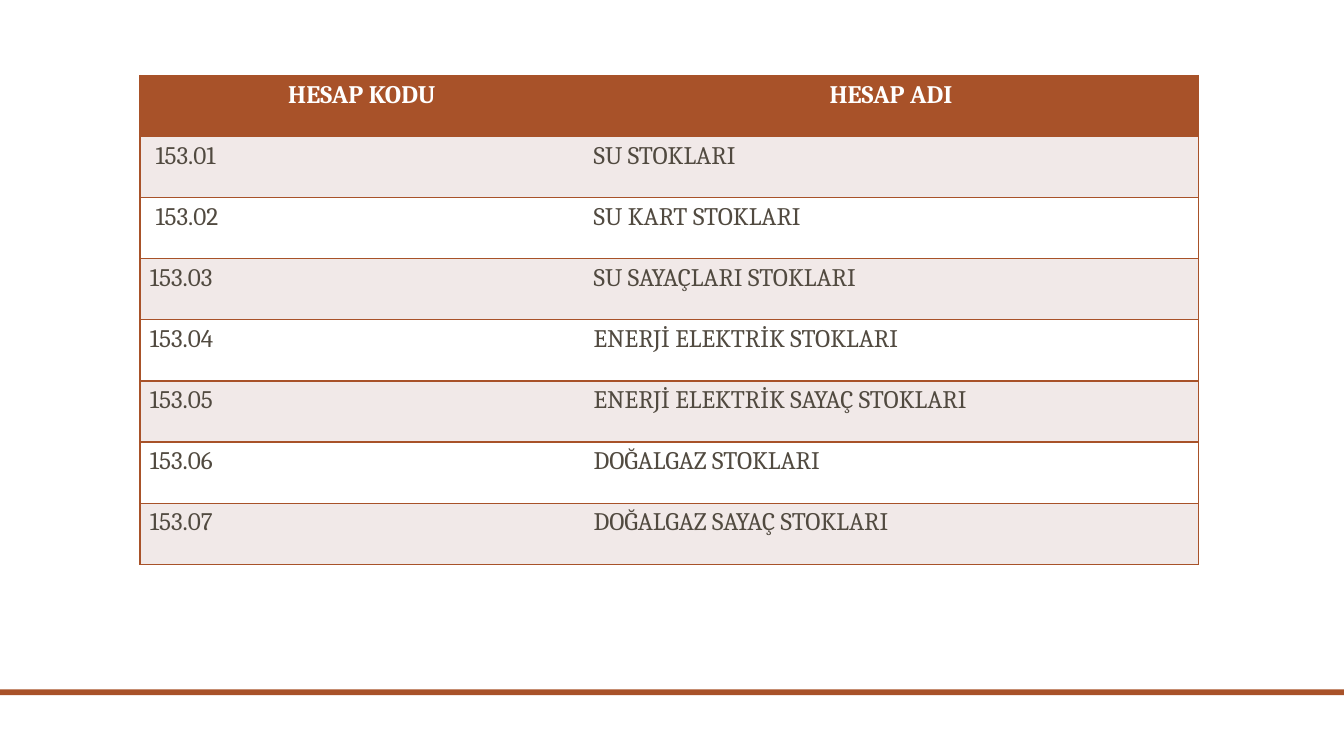
from lxml import etree
from pptx import Presentation
from pptx.dml.color import RGBColor
from pptx.enum.shapes import MSO_SHAPE
from pptx.enum.text import PP_ALIGN
from pptx.oxml.ns import qn
from pptx.util import Cm, Pt

RECT, CENTER, LEFT = MSO_SHAPE.RECTANGLE, PP_ALIGN.CENTER, PP_ALIGN.LEFT

# Content
HEADER = ("HESAP KODU", "HESAP ADI")
ACCOUNTS = [
    ("153.01", "SU STOKLARI"),
    ("153.02", "SU KART STOKLARI"),
    ("153.03", "SU SAYAÇLARI STOKLARI"),
    ("153.04", "ENERJİ ELEKTRİK STOKLARI"),
    ("153.05", "ENERJİ ELEKTRİK SAYAÇ STOKLARI"),
    ("153.06", "DOĞALGAZ STOKLARI"),
    ("153.07", "DOĞALGAZ SAYAÇ STOKLARI"),
]
INDENTED_CODES = ("153.01", "153.02")

# Look and layout
FONT, SIZE = "Cambria", Pt(18)
BROWN, TEXT, BAND, WHITE = "A85229", "514A40", "F1E9E8", "FFFFFF"
SLIDE_W, SLIDE_H = Cm(33.87), Cm(19.05)
TABLE_LEFT, TABLE_TOP = Cm(3.53), Cm(1.9)
COL_WIDTHS = (Cm(11.18), Cm(15.49))
ROW_H = Cm(1.54)
BAR_TOP, BAR_H = Cm(17.37), Cm(0.15)
MARGIN, INDENTED_MARGIN = Cm(0.25), Cm(0.39)


def rgb(color):
    return RGBColor.from_string(color)


def set_borders(cell, outer_side):
    """Rule the top, bottom and outer side; leave the inner side open."""
    tc_pr = cell._tc.get_or_add_tcPr()
    for side in "LRTB":
        ln = etree.SubElement(tc_pr, qn(f"a:ln{side}"), w=str(Pt(1)))
        if side in outer_side + "TB":
            fill = etree.SubElement(ln, qn("a:solidFill"))
            etree.SubElement(fill, qn("a:srgbClr"), val=BROWN)
        else:
            etree.SubElement(ln, qn("a:noFill"))


prs = Presentation()
prs.slide_width, prs.slide_height = SLIDE_W, SLIDE_H
s = prs.slides.add_slide(prs.slide_layouts[6])

# Bottom bar
bar = s.shapes.add_shape(RECT, 0, BAR_TOP, SLIDE_W, BAR_H)
bar.shadow.inherit = False
bar.fill.solid()
bar.fill.fore_color.rgb = rgb(BROWN)
bar.line.fill.background()

# Account table
rows = [HEADER] + ACCOUNTS
table = s.shapes.add_table(len(rows), len(HEADER), TABLE_LEFT, TABLE_TOP,
                           sum(COL_WIDTHS), ROW_H * len(rows)).table
for column, width in zip(table.columns, COL_WIDTHS):
    column.width = width

for i, row in enumerate(rows):
    is_header = i == 0
    fill_color = BROWN if is_header else BAND if i % 2 else WHITE
    for j, text in enumerate(row):
        cell = table.cell(i, j)
        set_borders(cell, "LR"[j])
        cell.fill.solid()
        cell.fill.fore_color.rgb = rgb(fill_color)
        cell.margin_left = INDENTED_MARGIN if text in INDENTED_CODES else MARGIN
        p = cell.text_frame.paragraphs[0]
        p.text = text
        p.alignment = CENTER if is_header else LEFT
        font = p.runs[0].font
        font.name, font.size, font.bold = FONT, SIZE, is_header
        font.color.rgb = rgb(WHITE if is_header else TEXT)

prs.save("out.pptx")
